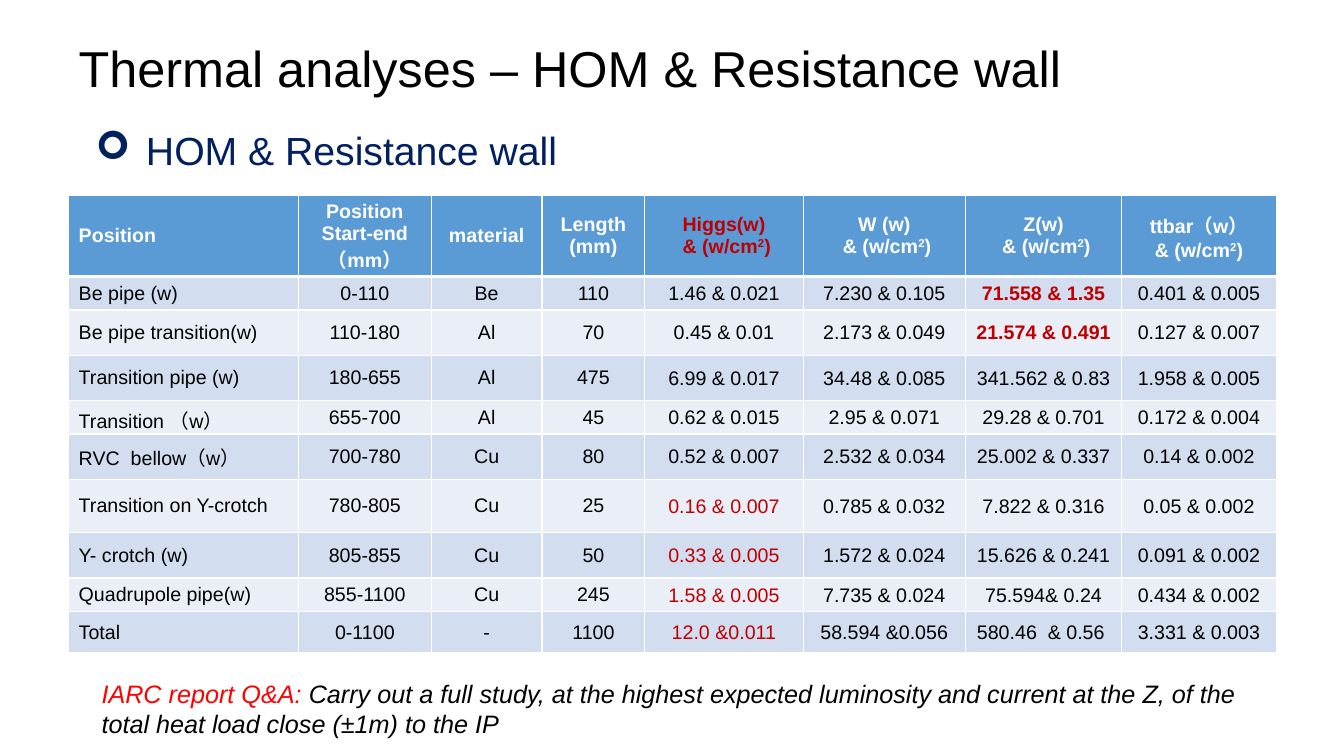
"""Build the slide on the HOM and resistance wall thermal analyses."""
from dataclasses import dataclass

from lxml import etree
from pptx import Presentation
from pptx import util as u
from pptx.dml import color
from pptx.enum import text
from pptx.oxml import ns


@dataclass(frozen=True)
class Theme:
    font: str = "Arial"
    title: int = 36
    heading: int = 28
    note: int = 18
    cell: int = 14
    black: str = "000000"
    white: str = "FFFFFF"
    navy: str = "002060"
    red: str = "FF0000"
    dark_red: str = "C00000"
    header: str = "5B9BD5"
    bands: tuple = ("D2DEEF", "EAEFF7")


THEME = Theme()
COLUMN_WIDTHS = (5.79, 3.35, 2.79, 2.59, 3.99, 4.09, 3.94, 3.89)
ROW_HEIGHTS = (1.93, 0.81, 1.14, 1.14, 0.81, 1.14, 1.35, 1.14, 0.81, 1.04)
HEADERS = (
    ("Position",),
    ("Position", "Start-end（mm）"),
    ("material",),
    ("Length", "(mm)"),
    ("Higgs(w)", " & (w/cm2)"),
    ("W (w)", " & (w/cm2)"),
    ("Z(w)", " & (w/cm2)"),
    ("ttbar（w）", "& (w/cm2)"),
)
ROWS = (
    ("Be pipe (w)", "0-110", "Be", "110",
     "1.46 & 0.021", "7.230 & 0.105", "71.558 & 1.35", "0.401 & 0.005"),
    ("Be pipe transition(w)", "110-180", "Al", "70",
     "0.45 & 0.01", "2.173 & 0.049", "21.574 & 0.491", "0.127 & 0.007"),
    ("Transition pipe (w)", "180-655", "Al", "475",
     "6.99 & 0.017", "34.48 & 0.085", "341.562 & 0.83", "1.958 & 0.005"),
    ("Transition （w）", "655-700", "Al", "45",
     "0.62 & 0.015", "2.95 & 0.071", "29.28 & 0.701", "0.172 & 0.004"),
    ("RVC  bellow（w）", "700-780", "Cu", "80",
     "0.52 & 0.007", "2.532 & 0.034", "25.002 & 0.337", "0.14 & 0.002"),
    ("Transition on Y-crotch", "780-805", "Cu", "25",
     "0.16 & 0.007", "0.785 & 0.032", "7.822 & 0.316", "0.05 & 0.002"),
    ("Y- crotch (w)", "805-855", "Cu", "50",
     "0.33 & 0.005", "1.572 & 0.024", "15.626 & 0.241", "0.091 & 0.002"),
    ("Quadrupole pipe(w)", "855-1100", "Cu", "245",
     "1.58 & 0.005", "7.735 & 0.024", "75.594& 0.24", "0.434 & 0.002"),
    ("Total", "0-1100", "-", "1100",
     "12.0 &0.011", "58.594 &0.056", "580.46  & 0.56 ", "3.331 & 0.003"),
)
HIGGS, Z = 4, 6
BOLD_CELLS = {(1, Z), (2, Z)}
RED_CELLS = BOLD_CELLS | {(row, HIGGS) for row in (0, 6, 7, 8, 9)}


def add_run(p, content, size=THEME.cell, fill=THEME.black, bold=False,
            italic=False, superscript=False):
    """Append a formatted run to a paragraph."""
    r = p.add_run()
    r.text = content
    r.font.name = THEME.font
    r.font.size = u.Pt(size)
    r.font.color.rgb = color.RGBColor.from_string(fill)
    r.font.bold = bold
    r.font.italic = italic
    if superscript:
        r.font._element.set("baseline", "30000")


def add_text_box(s, left, top, width, height, anchor=text.MSO_ANCHOR.TOP):
    """Add a wrapping text box and return its first paragraph."""
    tf = s.shapes.add_textbox(u.Cm(left), u.Cm(top), u.Cm(width), u.Cm(height)).text_frame
    tf.word_wrap = True
    tf.vertical_anchor = anchor
    return tf.paragraphs[0]


def set_bullet(p, char, indent):
    """Give a paragraph a bullet with a hanging indent."""
    pPr = p._p.get_or_add_pPr()
    pPr.set("marL", str(u.Cm(indent)))
    pPr.set("indent", str(-u.Cm(indent)))
    etree.SubElement(pPr, ns.qn("a:buFont")).set("typeface", "Wingdings")
    etree.SubElement(pPr, ns.qn("a:buChar")).set("char", char)


def set_borders(cell, **widths):
    """Draw white cell borders with the given widths in points."""
    tcPr = cell._tc.get_or_add_tcPr()
    for side in "LRTB":
        ln = etree.SubElement(tcPr, ns.qn(f"a:ln{side}"), w=str(u.Pt(widths.get(side, 1))))
        fill = etree.SubElement(ln, ns.qn("a:solidFill"))
        etree.SubElement(fill, ns.qn("a:srgbClr"), val=THEME.white)


def style_cell(cell, row, col):
    """Set the borders, fill, anchor and margins of a table cell."""
    set_borders(cell, T=3 if row == 1 else 1, B=3 if row == 0 else 1)
    cell.fill.solid()
    fill = THEME.bands[(row - 1) % 2] if row else THEME.header
    cell.fill.fore_color.rgb = color.RGBColor.from_string(fill)
    cell.vertical_anchor = text.MSO_ANCHOR.MIDDLE
    if row and col >= HIGGS:
        cell.margin_left = cell.margin_right = cell.margin_top = u.Cm(0.02)
        cell.margin_bottom = 0


def fill_cell(cell, row, col, lines):
    """Write the lines of a table cell, raising the exponent in header units."""
    base = THEME.black if row else THEME.white
    style = {"fill": THEME.dark_red if (row, col) in RED_CELLS else base,
             "bold": row == 0 or (row, col) in BOLD_CELLS}
    tf = cell.text_frame
    for i, line in enumerate(lines):
        p = tf.add_paragraph() if i else tf.paragraphs[0]
        p.alignment = text.PP_ALIGN.CENTER if col else text.PP_ALIGN.LEFT
        before, exponent, after = (line, "", "") if row else line.partition("2")
        add_run(p, before, **style)
        if exponent:
            add_run(p, exponent, superscript=True, **style)
            add_run(p, after, **style)


def add_heat_table(s, left, top):
    """Add the heat load table."""
    grid = [HEADERS] + [[(value,) for value in row] for row in ROWS]
    table = s.shapes.add_table(len(grid), len(HEADERS), u.Cm(left), u.Cm(top),
                               u.Cm(sum(COLUMN_WIDTHS)), u.Cm(sum(ROW_HEIGHTS))).table
    table.first_row = table.horz_banding = False
    for column, width in zip(table.columns, COLUMN_WIDTHS):
        column.width = u.Cm(width)
    for row, (height, cells) in enumerate(zip(ROW_HEIGHTS, grid)):
        table.rows[row].height = u.Cm(height)
        for col, lines in enumerate(cells):
            cell = table.cell(row, col)
            style_cell(cell, row, col)
            fill_cell(cell, row, col, lines)


def main():
    """Build and save the slide."""
    prs = Presentation()
    prs.slide_width, prs.slide_height = u.Cm(33.87), u.Cm(19.05)
    s = prs.slides.add_slide(prs.slide_layouts[6])

    p = add_text_box(s, 2.16, 2.77, 24.97, 2.16, text.MSO_ANCHOR.MIDDLE)
    p.line_spacing = 0.9
    set_bullet(p, "➢", 1.27)
    add_run(p, "HOM & Resistance wall", size=THEME.heading, fill=THEME.navy)

    add_heat_table(s, 1.73, 4.93)

    p = add_text_box(s, 1.73, 0.81, 31.04, 1.8)
    add_run(p, "Thermal analyses – HOM & Resistance wall", size=THEME.title)

    p = add_text_box(s, 2.31, 16.97, 30.45, 1.8)
    add_run(p, "IARC report Q&A: ", size=THEME.note, fill=THEME.red, italic=True)
    add_run(p, "Carry out a full study, at the highest expected luminosity and current "
               "at the Z, of the total heat load close (±1m) to the IP",
            size=THEME.note, italic=True)

    prs.save("out.pptx")


if __name__ == "__main__":
    main()
